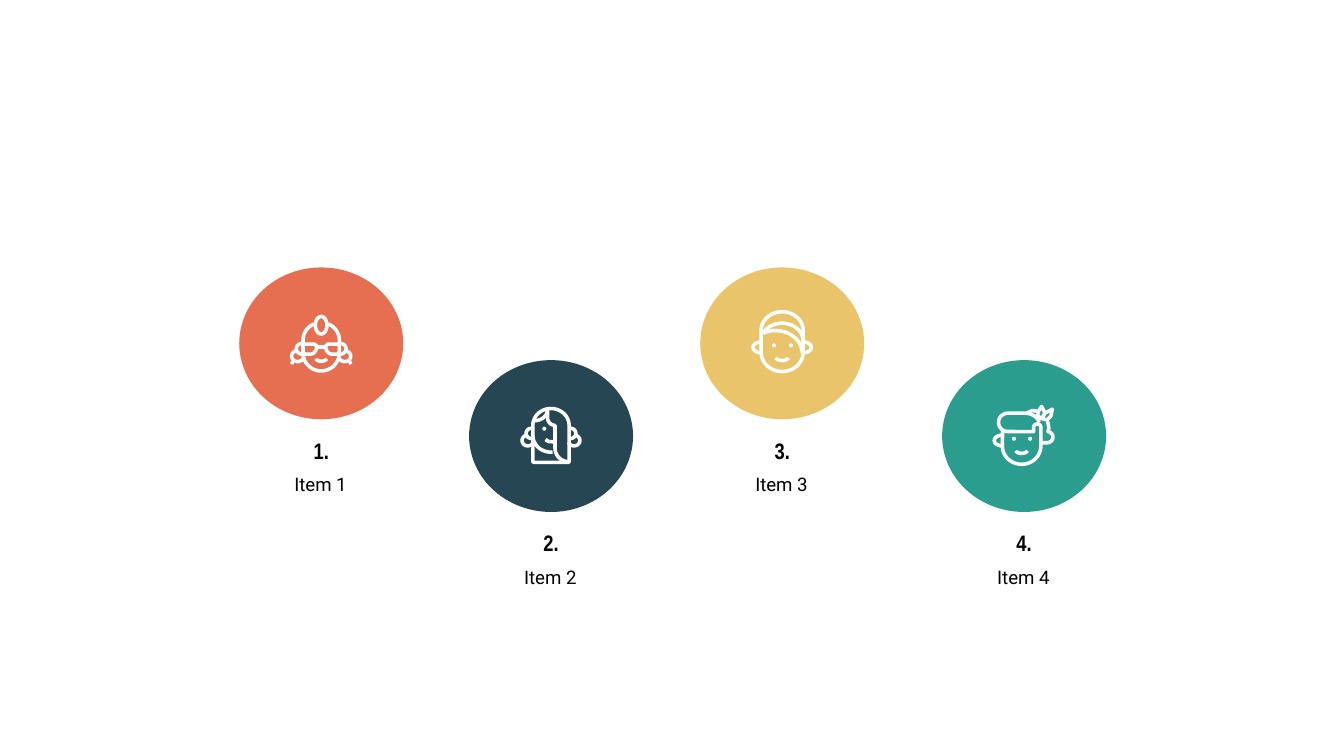
from math import cos, radians, sin

from pptx import Presentation
from pptx.dml.color import RGBColor
from pptx.enum.shapes import MSO_SHAPE as Shape
from pptx.enum.text import MSO_ANCHOR as Anchor, PP_ALIGN as Align
from pptx.util import Inches, Pt

COLORS = {
    "coral": "E76F51",
    "navy": "264653",
    "sand": "E9C46A",
    "teal": "2A9D8F",
    "icon": "FFFFFF",
    "text": "000000",
}
SLIDE_W = 10
SLIDE_H = SLIDE_W * 9 / 16
CIRCLE_W, CIRCLE_H = 1.22, 1.13
UPPER, LOWER = 1.99, 2.68
EYE = 0.03


def arc(cx, cy, rx, ry, start, end):
    """Points along an elliptical arc; degrees run clockwise from the right."""
    steps = max(6, round(abs(end - start) / 8))
    angles = [radians(start + (end - start) * i / steps) for i in range(steps + 1)]
    return [(cx + rx * cos(a), cy + ry * sin(a)) for a in angles]


def both_sides(*strokes):
    """The strokes together with their mirror images about x = 0."""
    return [*strokes, *([(-x, y) for x, y in stroke] for stroke in strokes)]


# Icon strokes are in hundredths of an inch from the centre of the circle.
def glasses_head():
    return [
        arc(0, 7, 13.5, 13.5, 0, 180) + arc(0, -2.5, 13.5, 13, 180, 247),
        arc(0, -2.5, 13.5, 13, 293, 360) + [(13.5, 7)],
        arc(0, -13.5, 4.3, 6.5, 0, 360),
        [(-3.5, 2.8), (3.5, 2.8)],
        *both_sides(
            [(-13.5, 1.5), (-12, 0.5), (-5, 0.5)]
            + arc(-8, 2, 4.7, 6, 0, 90) + [(-12, 8), (-13.5, 6.5)],
            arc(-14, 4, 4.5, 4, 90, 270),
            arc(-17.5, 9.5, 4.5, 4, 10, 250),
            [(-20.7, 12.5), (-22, 15.5)],
        ),
    ]


def long_hair_head():
    hair = arc(0, -8, 13.5, 12.5, 180, 360) + [(13.5, 19.5), (-13.5, 19.5)]
    return [
        hair + hair[:1],
        arc(0, -0.5, 13.5, 12.5, 85, 180),
        [(-2.5, -20)] + arc(3, -13.5, 5.5, 5.5, 180, 90) + arc(13, 9, 10, 10, 180, 90),
        arc(-12, -20, 9.5, 8.5, 10, 90),
        [(-4, 2.5), (-2, 4), (1.5, 4.3)],
        *both_sides(
            arc(-14.5, -2, 4, 3.8, 90, 270),
            arc(-17.2, 3.3, 4.3, 4, 20, 250),
        ),
    ]


def short_hair_head():
    head = arc(0, -9.5, 15.7, 14, 180, 360) + arc(0, 6.5, 15.7, 14.5, 0, 180)
    return [
        head + head[:1],
        arc(0, -1.5, 15.7, 13.5, 210, 360),
        [(-14, -7.5)] + arc(-5, 7.5, 20, 17, 250, 360),
        *both_sides(arc(-15.7, 3, 6, 4, 90, 270)),
    ]


def leaf_head():
    return [
        [(-16, -4)] + arc(-1.8, 7.5, 14.3, 13.5, 180, 0)
        + arc(9.8, -6.5, 2.7, 2.5, 0, -180) + [(7.1, -3.3)]
        + arc(-12, -10.2, 7, 6.8, 90, 270) + arc(1, -7, 11, 10, 270, 340),
        arc(-16, 3.3, 6.2, 4, 90, 270),
        [(12.5, 5)] + arc(17, 0.8, 4.5, 4.2, 90, -80) + [(18.5, -6), (17.5, -11)],
        [(10, -15), (11, -19), (13, -22), (15.5, -17.5), (13.5, -13), (10, -15)],
        [(13.5, -13), (15.5, -17), (21, -20), (20, -15), (17, -12), (13.5, -13)],
        [(2, -17), (6, -19), (10, -18.5)],
    ]


class Deck:
    """Slide style and the current slide."""

    def __init__(self):
        self.prs = Presentation()
        self.prs.slide_width, self.prs.slide_height = Inches(SLIDE_W), Inches(SLIDE_H)
        self.slide = self.prs.slides.add_slide(self.prs.slide_layouts[6])

    def color(self, name):
        return RGBColor.from_string(COLORS[name])

    def ellipse(self, left, top, width, height, fill):
        oval = self.slide.shapes.add_shape(
            Shape.OVAL, Inches(left), Inches(top), Inches(width), Inches(height))
        oval.shadow.inherit = False
        oval.fill.solid()
        oval.fill.fore_color.rgb = self.color(fill)
        oval.line.fill.background()

    def text(self, left, top, width, height, words, font, size,
             bold=False, anchor=Anchor.TOP, spacing=None):
        box = self.slide.shapes.add_textbox(
            Inches(left), Inches(top), Inches(width), Inches(height))
        frame = box.text_frame
        frame.word_wrap = True
        frame.vertical_anchor = anchor
        frame.margin_left = frame.margin_right = Inches(0.1)
        frame.margin_top = frame.margin_bottom = Inches(0.1)
        paragraph = frame.paragraphs[0]
        paragraph.alignment = Align.CENTER
        paragraph.line_spacing = spacing
        run = paragraph.add_run()
        run.text = words
        run.font.name, run.font.size, run.font.bold = font, Pt(size), bold
        run.font.color.rgb = self.color("text")

    def outline(self, cx, cy, strokes):
        placed = [[(Inches(cx + x / 100), Inches(cy + y / 100)) for x, y in stroke]
                  for stroke in strokes]
        builder = self.slide.shapes.build_freeform(*placed[0][0])
        builder.add_line_segments(placed[0][1:], close=False)
        for start, *rest in placed[1:]:
            builder.move_to(*start)
            builder.add_line_segments(rest, close=False)
        drawing = builder.convert_to_shape()
        drawing.shadow.inherit = False
        drawing.fill.background()
        drawing.line.color.rgb = self.color("icon")
        drawing.line.width = Pt(1.9)

    def item(self, number, left, top, fill):
        self.ellipse(left, top, CIRCLE_W, CIRCLE_H, fill)
        self.text(left - 0.11, top + 1.41, 1.43, 0.56, f"Item {number}",
                  "Roboto", 10, spacing=1.15)
        self.text(left + 0.12, top + 1.21, 0.98, 0.3, f"{number}.",
                  "Arial Narrow", 12, bold=True, anchor=Anchor.MIDDLE)

    def icon(self, left, top, head, smile, eyes):
        cx, cy = left + CIRCLE_W / 2, top + CIRCLE_H / 2
        if smile:
            self.outline(cx, cy, [smile])
        for x, y in eyes:
            self.ellipse(cx + x / 100 - EYE / 2, cy + y / 100 - EYE / 2,
                         EYE, EYE, "icon")
        self.outline(cx, cy, head)


def main():
    deck = Deck()
    items = [
        (1.78, UPPER, "coral", glasses_head(), arc(0, 10.5, 4.3, 2.8, 20, 160), []),
        (3.49, LOWER, "navy", long_hair_head(), [], [(-5, -5.5)]),
        (5.21, UPPER, "sand", short_hair_head(), arc(0, 9.8, 5, 3, 20, 160),
         [(-6, 1.5), (6.5, 1.5)]),
        (7.01, LOWER, "teal", leaf_head(), arc(-1.8, 10, 4.7, 2.8, 20, 160),
         [(-7.5, 2), (4.5, 2)]),
    ]
    for number, (left, top, fill, head, smile, eyes) in enumerate(items, 1):
        deck.item(number, left, top, fill)
        deck.icon(left, top, head, smile, eyes)
    deck.prs.save("out.pptx")


if __name__ == "__main__":
    main()
